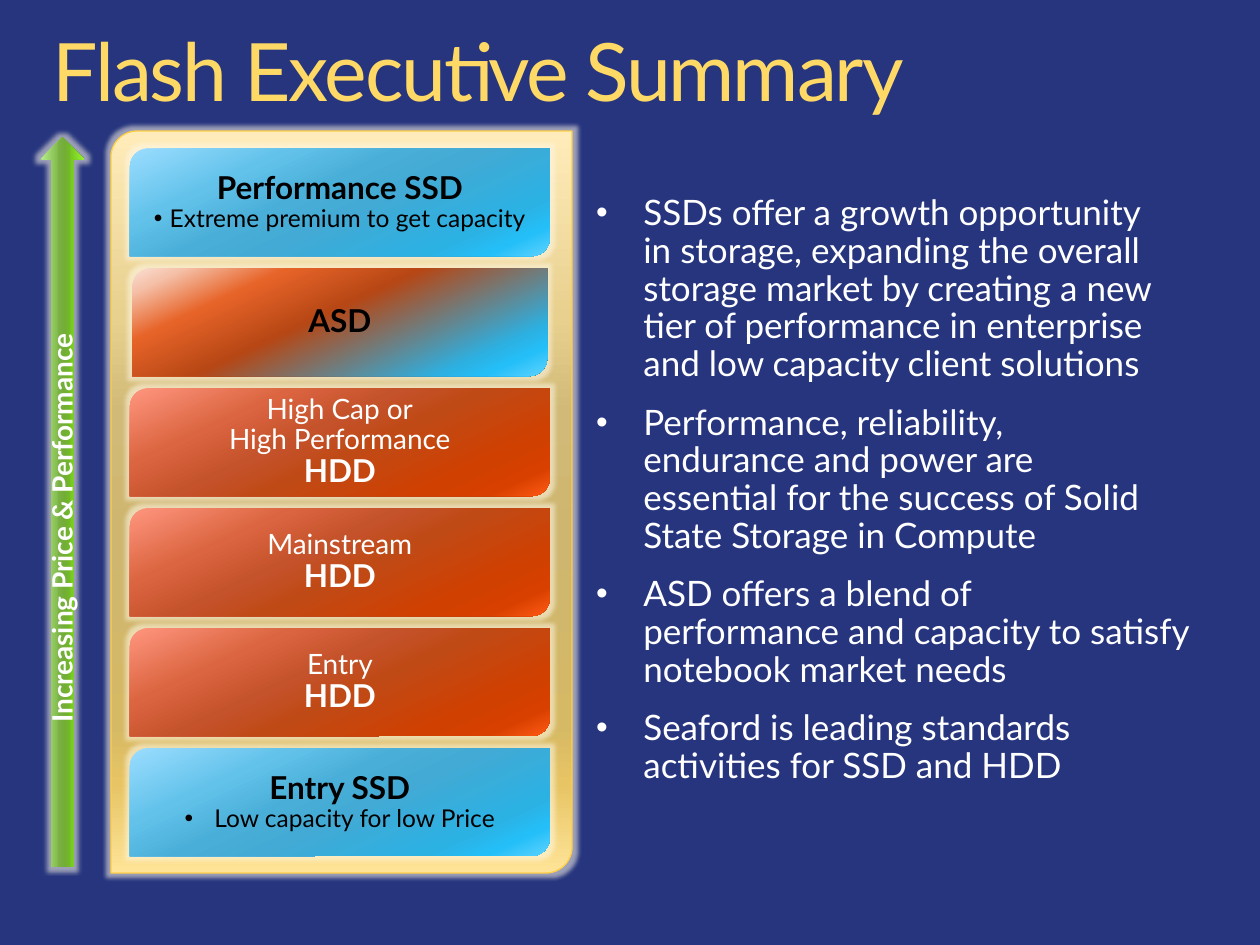
from lxml.etree import SubElement
from pptx import Presentation
from pptx.dml.color import RGBColor
from pptx.enum.shapes import MSO_SHAPE as SHAPE
from pptx.enum.text import MSO_ANCHOR as ANCHOR, MSO_AUTO_SIZE as AUTO, PP_ALIGN as ALIGN
from pptx.oxml.ns import qn
from pptx.util import Pt

FONT = "Lato"
WHITE, BLACK = "FFFFFF", "000000"

TITLE = "Flash Executive Summary"
BULLETS = [
    "SSDs offer a growth opportunity \nin storage, expanding the overall storage market by "
    "creating a new tier of performance in enterprise and low capacity client solutions",
    "Performance, reliability, \nendurance and power are \nessential for the success of "
    "Solid State Storage in Compute",
    "ASD offers a blend of \nperformance and capacity to satisfy notebook market needs",
    "Seaford is leading standards activities for SSD and HDD",
]
AXIS_LABEL = "Increasing Price & Performance"

# Gradients: (position in percent, colour)
GOLD_TEXT = [(0, "FFF2CC"), (41, "FFD966"), (100, "FFC000")]
GOLD = [(0, "FFECBA"), (25, "E8D08E"), (38, "D1B977"), (55, "CEB670"),
        (80, "D6B965"), (88, "E7C565"), (100, "FFE498")]
GREEN = [(0, "B6EF8B"), (35, "8AC155"), (43, "79B044"), (55, "73AD35"),
         (65, "72B828"), (70, "78CA22"), (100, "94F32F")]
BLUE = [(0, "9BDDFF"), (25, "62C2EA"), (42, "4AAFD8"), (55, "42AAD4"),
        (80, "2CB1E3"), (90, "24BFF8"), (100, "5FD3FF")]
RED = [(0, "FF967F"), (25, "DB6540"), (42, "C4522B"), (55, "C04A16"),
       (80, "D04000"), (90, "D84000"), (100, "FF5A14")]
BLEND = [(0, "FAE0D4"), (8, "F5C1A9"), (24, "E76429"), (45, "B74715"),
         (83, "2CB1E3"), (90, "24BFF8"), (100, "5FD3FF")]

# Tiers from top to bottom: gradient, text colour, side inset,
# lines (text, size, bold, bullet gap)
TIERS = [
    (BLUE, BLACK, 0, [("Performance SSD", 18, True, 0),
                      ("Extreme premium to get capacity", 14, False, 9)]),
    (BLEND, BLACK, 1.5, [("ASD", 18, True, 0)]),
    (RED, WHITE, 0, [("High Cap or\nHigh Performance", 16, False, 0), ("HDD", 18, True, 0)]),
    (RED, WHITE, 0, [("Mainstream", 16, False, 0), ("HDD", 18, True, 0)]),
    (RED, WHITE, 0, [("Entry", 16, False, 0), ("HDD", 18, True, 0)]),
    (BLUE, BLACK, 0, [("Entry SSD", 18, True, 0),
                      ("Low capacity for low Price", 14, False, 17)]),
]
TIER_LEFT, TIER_TOP, TIER_W, TIER_H, TIER_PITCH = 74.2, 84.9, 240, 61.5, 68.55


def rgb(color):
    return RGBColor.from_string(color)


def set_gradient(fill, stops, angle):
    """Fill with a linear gradient; the angle runs clockwise."""
    fill.gradient()
    grad = fill._xPr.find(qn("a:gradFill"))
    stop_list = grad.find(qn("a:gsLst"))
    for old in list(stop_list):
        stop_list.remove(old)
    for pos, color in stops:
        gs = SubElement(stop_list, qn("a:gs"), pos=str(pos * 1000))
        SubElement(gs, qn("a:srgbClr"), val=color)
    lin = grad.find(qn("a:lin"))
    lin.set("ang", str(angle * 60000))
    lin.set("scaled", "0")


def add_glow(shape, color, radius):
    effects = shape._element.spPr.find(qn("a:effectLst"))
    glow = SubElement(effects, qn("a:glow"), rad=str(Pt(radius)))
    clr = SubElement(glow, qn("a:srgbClr"), val=color)
    SubElement(clr, qn("a:alpha"), val="55000")


def add_gradient_shape(s, kind, box, stops, angle):
    sp = s.shapes.add_shape(kind, *map(Pt, box))
    sp.shadow.inherit = False
    set_gradient(sp.fill, stops, angle)
    sp.line.fill.background()
    add_glow(sp, "FFF8E8", 5)
    return sp


def set_bullet(p, color, margin, gap, size=100, tab=None):
    pPr = p._p.get_or_add_pPr()
    pPr.set("marL", str(Pt(margin)))
    pPr.set("indent", str(-Pt(gap)))
    SubElement(SubElement(pPr, qn("a:buClr")), qn("a:srgbClr"), val=color)
    SubElement(pPr, qn("a:buSzPct"), val=str(size * 1000))
    SubElement(pPr, qn("a:buFont"), typeface="Arial")
    SubElement(pPr, qn("a:buChar"), char="•")
    if tab:
        SubElement(SubElement(pPr, qn("a:tabLst")), qn("a:tab"), pos=str(Pt(tab)), algn="l")


def format_runs(p, size, color, bold=False):
    for r in p.runs:
        r.font.name, r.font.size, r.font.bold = FONT, Pt(size), bold
        r.font.color.rgb = rgb(color)


def place(sp, left, top, width, height):
    sp.left, sp.top, sp.width, sp.height = map(Pt, (left, top, width, height))


def clear_insets(tf):
    tf.margin_left = tf.margin_right = tf.margin_top = tf.margin_bottom = 0
    tf.vertical_anchor = ANCHOR.TOP
    tf.word_wrap = True
    tf.auto_size = AUTO.NONE


prs = Presentation()
prs.slide_width, prs.slide_height = Pt(720), Pt(540)
s = prs.slides.add_slide(prs.slide_layouts[1])
s.background.fill.solid()
s.background.fill.fore_color.rgb = rgb("26357E")

title, body = s.placeholders
place(title, 30, 18, 660, 52.5)
clear_insets(title.text_frame)
title.text_frame.text = TITLE
p = title.text_frame.paragraphs[0]
p.alignment, p.line_spacing = ALIGN.LEFT, 0.9
font = p.runs[0].font
font.name, font.size = FONT, Pt(46)
set_gradient(font.fill, GOLD_TEXT, 90)
p.runs[0]._r.get_or_add_rPr().set("spc", "-120")

place(body, 340.6, 111.6, 349.2, 381)
tf = body.text_frame
clear_insets(tf)
for i, text in enumerate(BULLETS):
    p = tf.add_paragraph() if i else tf.paragraphs[0]
    p.text = text
    set_bullet(p, WHITE, 27, 27, 95, tab=36)
    p.line_spacing, p.space_before = 0.9, Pt(11.7 if i else 0)
    format_runs(p, 20, WHITE)

frame = add_gradient_shape(s, SHAPE.ROUND_2_DIAG_RECTANGLE, (63.4, 74.9, 263.5, 424), GOLD, 90)
frame.adjustments[0] = 0.057
frame.line.color.rgb = rgb("FFCF46")
frame.line.width = Pt(0.75)

for row, (stops, color, inset, lines) in enumerate(TIERS):
    box = (TIER_LEFT + inset, TIER_TOP + row * TIER_PITCH, TIER_W - 2 * inset, TIER_H)
    tier = add_gradient_shape(s, SHAPE.ROUND_2_DIAG_RECTANGLE, box, stops, 65)
    tf = tier.text_frame
    tf.word_wrap, tf.vertical_anchor = False, ANCHOR.MIDDLE
    for i, (text, size, bold, gap) in enumerate(lines):
        p = tf.add_paragraph() if i else tf.paragraphs[0]
        p.text = text
        if gap:
            set_bullet(p, color, gap, gap)
        p.alignment, p.line_spacing = ALIGN.CENTER, 0.9
        format_runs(p, size, color, bold)

arrow = add_gradient_shape(s, SHAPE.RIGHT_ARROW, (-172.8, 274.3, 417, 25.2), GREEN, 90)
arrow.rotation = 270

label = s.shapes.add_textbox(*map(Pt, (-96.5, 275, 263.5, 26.6)))
label.rotation = 270
tf = label.text_frame
tf.word_wrap = True
tf.text = AXIS_LABEL
format_runs(tf.paragraphs[0], 16, WHITE, True)

prs.save("out.pptx")
